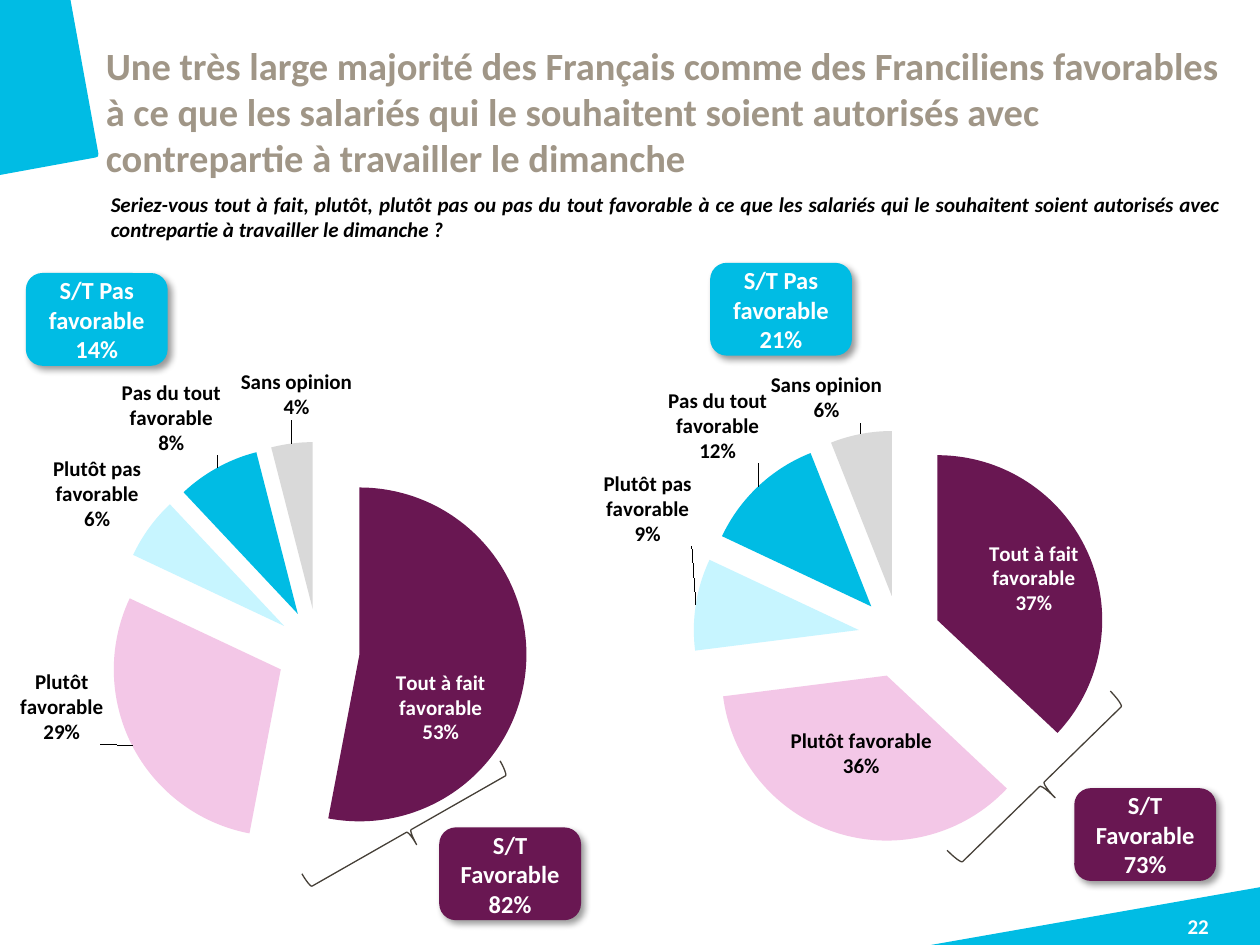
from lxml import etree
from pptx import Presentation
from pptx.chart.data import CategoryChartData
from pptx.dml.color import RGBColor
from pptx.enum.chart import XL_CHART_TYPE, XL_LABEL_POSITION
from pptx.enum.shapes import MSO_SHAPE
from pptx.enum.text import MSO_ANCHOR, PP_ALIGN
from pptx.oxml import parse_xml
from pptx.oxml.ns import qn
from pptx.util import Pt

PIE = XL_CHART_TYPE.PIE
CENTRE, OUTSIDE = XL_LABEL_POSITION.CENTER, XL_LABEL_POSITION.OUTSIDE_END
ROUNDED, BRACE = MSO_SHAPE.ROUNDED_RECTANGLE, MSO_SHAPE.RIGHT_BRACE
TOP, MIDDLE = MSO_ANCHOR.TOP, MSO_ANCHOR.MIDDLE
ALIGN_LEFT, ALIGN_CENTRE, JUSTIFY = PP_ALIGN.LEFT, PP_ALIGN.CENTER, PP_ALIGN.JUSTIFY

FONT = "Calibri"
CYAN, PLUM, TAUPE = "00BCE4", "691752", "A09687"
WHITE, BLACK, BRACE_LINE = "FFFFFF", "000000", "464038"
ANSWERS = {
    "Tout à fait favorable": PLUM,
    "Plutôt favorable": "F3C7E7",
    "Plutôt pas favorable": "C7F5FF",
    "Pas du tout favorable": CYAN,
    "Sans opinion": "D9D9D9",
}
CHART_W, CHART_H = 361.4, 351.4
BADGE_W, BADGE_H = 79, 51

# Each point of view: label shifts, badge and brace places are relative to its panel.
# Labels listed in "centred" are shifted from the middle of their slice.
PANELS = [
    dict(origin=(342.7, 188.6), shares=(37, 36, 9, 12, 6), plot_x=0.148, plot_w=0.652,
         centred=(0, 1, 2), shifts=((12, -5), (0, 0), (-74, -62), (8, -10), (13, -2)),
         favourable=("S/T Favorable 73%", 272.2, 262.8),
         opposed=("S/T Pas favorable 21%", 64.1, -37.4),
         brace=(241.9, 194.4, 21.6, 130.3, 45.7)),
    dict(origin=(11.5, 196.6), shares=(53, 29, 6, 8, 4), plot_x=0.141, plot_w=0.66,
         centred=(0,), shifts=((-1, 26), (-14, -45), (-1, 5), (4, -3), (35, -9)),
         favourable=("S/T Favorable 82%", 240.5, 277.2),
         opposed=("S/T Pas favorable 14%", 4.3, -39.6),
         brace=(213.1, 213.1, 18, 130.3, 60.3)),
]


def rgb(hex_colour):
    return RGBColor.from_string(hex_colour)


def style_font(font, size, colour, italic=None):
    font.name, font.size, font.bold = FONT, Pt(size), True
    font.italic = italic
    font.color.rgb = rgb(colour)


def write(frame, text, size, colour, align, anchor=TOP, inset=None, italic=None):
    frame.word_wrap = True
    frame.vertical_anchor = anchor
    if inset is not None:
        frame.margin_left = frame.margin_right = Pt(inset)
        frame.margin_top = frame.margin_bottom = Pt(inset)
    paragraph = frame.paragraphs[0]
    paragraph.alignment = align
    run = paragraph.add_run()
    run.text = text
    style_font(run.font, size, colour, italic)


def add_text(slide, box, *args, **options):
    write(slide.shapes.add_textbox(*map(Pt, box)).text_frame, *args, **options)


def add_corner(slide, points):
    outline = [(Pt(x), Pt(y)) for x, y in points]
    builder = slide.shapes.build_freeform(*outline[0], scale=1.0)
    builder.add_line_segments(outline[1:], close=True)
    corner = builder.convert_to_shape()
    corner.shadow.inherit = False
    corner.fill.solid()
    corner.fill.fore_color.rgb = rgb(CYAN)
    corner.line.fill.background()


def add_badge(slide, text, left, top, colour):
    badge = slide.shapes.add_shape(ROUNDED, Pt(left), Pt(top), Pt(BADGE_W), Pt(BADGE_H))
    badge.fill.solid()
    badge.fill.fore_color.rgb = rgb(colour)
    badge.line.color.rgb = rgb(colour)
    badge.line.width = Pt(2)
    badge.shadow.inherit = False
    effects = badge._element.spPr.find(qn("a:effectLst"))
    shadow = etree.SubElement(effects, qn("a:outerShdw"), blurRad=str(Pt(4)),
                              dist=str(Pt(3)), dir="2700000", algn="tl", rotWithShape="0")
    tint = etree.SubElement(shadow, qn("a:srgbClr"), val=BLACK)
    etree.SubElement(tint, qn("a:alpha"), val="40000")
    write(badge.text_frame, text, 14, WHITE, ALIGN_CENTRE, MIDDLE)


def add_brace(slide, left, top, width, height, angle):
    brace = slide.shapes.add_shape(BRACE, Pt(left), Pt(top), Pt(width), Pt(height))
    brace.rotation = angle
    brace.shadow.inherit = False
    brace.fill.background()
    brace.line.color.rgb = rgb(BRACE_LINE)
    brace.line.width = Pt(0.75)


def manual_layout(target=None, **places):
    layout = parse_xml('<c:layout xmlns:c="http://schemas.openxmlformats.org/'
                       'drawingml/2006/chart"><c:manualLayout/></c:layout>')
    manual = layout[0]
    if target:
        etree.SubElement(manual, qn("c:layoutTarget"), val=target)
        for mode in ("xMode", "yMode"):
            etree.SubElement(manual, qn("c:" + mode), val="edge")
    for key, value in places.items():
        etree.SubElement(manual, qn("c:" + key), val=f"{value:.3f}")
    return layout


def show_share_and_answer(labels):
    """Show answer and percentage on separate lines."""
    for tag, shown in (("showVal", "0"), ("showCatName", "1"), ("showPercent", "1")):
        labels.find(qn("c:" + tag)).set("val", shown)
    separator = etree.Element(qn("c:separator"))
    separator.text = "\n"
    labels.find(qn("c:showBubbleSize")).addnext(separator)


def add_pie(slide, left, top, shares, plot_x, plot_w, centred, shifts):
    data = CategoryChartData()
    data.categories = list(ANSWERS)
    data.add_series("Series 1", shares)
    chart = slide.shapes.add_chart(PIE, Pt(left), Pt(top), Pt(CHART_W), Pt(CHART_H), data).chart
    chart.has_legend = False
    chart.has_title = False
    chart.font.name, chart.font.size = FONT, Pt(18)
    chart.font.color.rgb = rgb(TAUPE)
    plot = chart.plots[0]
    plot.vary_by_categories = True

    # Plot area
    plot_area = plot._element.getparent()
    for old in plot_area.findall(qn("c:layout")):
        plot_area.remove(old)
    plot_area.insert(0, manual_layout("inner", x=plot_x, y=0.159, w=plot_w, h=0.679))

    # Slices and their labels
    series = plot.series[0]
    explosion = etree.Element(qn("c:explosion"), val="25")
    series._element.find(qn("c:tx")).addnext(explosion)
    style_font(series.data_labels.font, 12, BLACK)
    for index, colour in enumerate(ANSWERS.values()):
        point = series.points[index]
        point.format.fill.solid()
        point.format.fill.fore_color.rgb = rgb(colour)
        point.format.line.fill.background()
        style_font(point.data_label.font, 12, WHITE if colour == PLUM else BLACK)
        point.data_label.position = CENTRE if index in centred else OUTSIDE
    all_labels = series._element.find(qn("c:dLbls"))
    show_share_and_answer(all_labels)
    for label, (dx, dy) in zip(all_labels.findall(qn("c:dLbl")), shifts):
        show_share_and_answer(label)
        if dx or dy:
            label.find(qn("c:idx")).addnext(manual_layout(x=dx / CHART_W, y=dy / CHART_H))


def add_panel(slide, origin, favourable, opposed, brace, **pie):
    left, top = origin
    add_pie(slide, left, top, **pie)
    for (text, x, y), colour in ((favourable, PLUM), (opposed, CYAN)):
        add_badge(slide, text, left + x, top + y, colour)
    x, y, *size_and_angle = brace
    add_brace(slide, left + x, top + y, *size_and_angle)


def add_frame(slide):
    # Corner shapes and page number
    add_corner(slide, [(532, 540), (720, 507), (720, 540)])
    add_corner(slide, [(0, 100), (0, 0), (40.3, 0), (56.2, 87.8), (56, 89.4), (54.7, 90)])
    add_text(slide, (649.4, 522, 70.6, 18), "22", 12, WHITE, ALIGN_CENTRE, inset=0)


def add_heading(slide):
    # Title and survey question
    add_text(slide, (60.5, 23.8, 647.3, 35.3),
             "Une très large majorité des Français comme des Franciliens favorables à ce que "
             "les salariés qui le souhaitent soient autorisés avec contrepartie à travailler "
             "le dimanche", 22, TAUPE, ALIGN_LEFT, inset=0)
    add_text(slide, (56.2, 105.8, 648.7, 21.6),
             "Seriez-vous tout à fait, plutôt, plutôt pas ou pas du tout favorable à ce que "
             "les salariés qui le souhaitent soient autorisés avec contrepartie à travailler "
             "le dimanche ?", 12, BLACK, JUSTIFY, italic=True)


def main():
    deck = Presentation()
    deck.slide_width, deck.slide_height = Pt(720), Pt(540)
    slide = deck.slides.add_slide(deck.slide_layouts[6])
    add_frame(slide)
    add_heading(slide)
    for panel in PANELS:
        add_panel(slide, **panel)
    deck.save("out.pptx")


if __name__ == "__main__":
    main()
